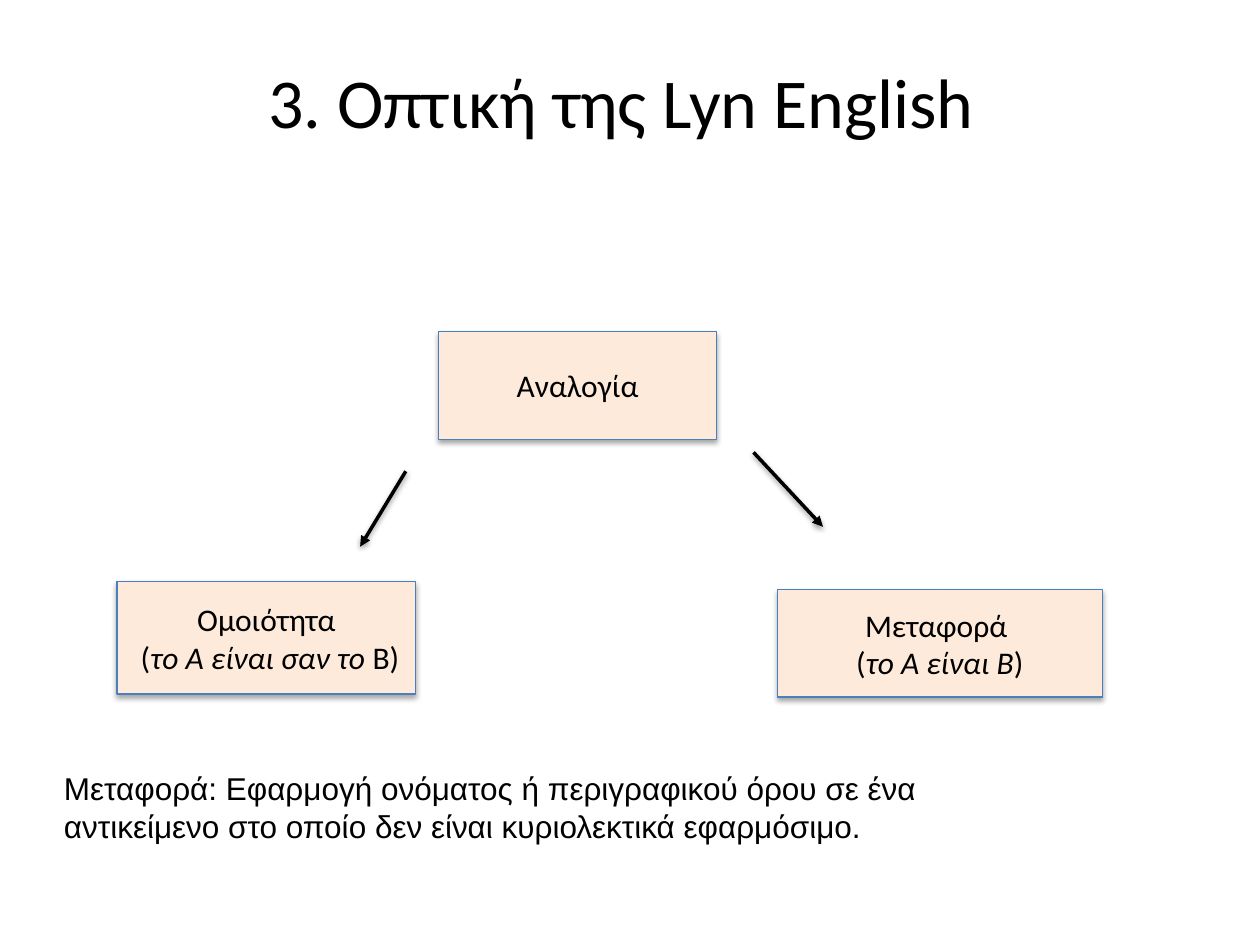
"""Build a slide on analogy, similarity and metaphor as a small tree of boxes."""
from lxml import etree
from pptx import Presentation
from pptx.dml.color import RGBColor
from pptx.enum.shapes import MSO_CONNECTOR, MSO_SHAPE
from pptx.enum.text import MSO_ANCHOR, MSO_AUTO_SIZE, PP_ALIGN
from pptx.oxml.ns import qn
from pptx.util import Cm, Pt

BLACK = RGBColor(0x00, 0x00, 0x00)
PEACH = RGBColor(0xFD, 0xEA, 0xDA)
BLUE = RGBColor(0x4B, 0x7E, 0xBC)
RECTANGLE = MSO_SHAPE.RECTANGLE
STRAIGHT = MSO_CONNECTOR.STRAIGHT
MIDDLE = MSO_ANCHOR.MIDDLE
CENTER = PP_ALIGN.CENTER
GROW = MSO_AUTO_SIZE.SHAPE_TO_FIT_TEXT


def format_run(r, size, font="Calibri", italic=False):
    r.font.size = Pt(size)
    r.font.name = font
    r.font.italic = italic
    r.font.color.rgb = BLACK


def add_shadow(spPr, distance, percent):
    effects = spPr.find(qn("a:effectLst"))
    if effects is None:
        effects = etree.SubElement(spPr, qn("a:effectLst"))
    shadow = etree.SubElement(effects, qn("a:outerShdw"), blurRad=str(Pt(3.15)),
                              dist=str(Pt(distance)), dir="5400000", rotWithShape="0")
    color = etree.SubElement(shadow, qn("a:srgbClr"), val=str(BLACK))
    etree.SubElement(color, qn("a:alpha"), val=str(percent * 1000))


prs = Presentation()
prs.slide_width, prs.slide_height = Cm(25.4), Cm(19.05)
slide = prs.slides.add_slide(prs.slide_layouts[5])

title = slide.shapes.title
title.left, title.top, title.width, title.height = Cm(0.33), Cm(0.43), Cm(24.69), Cm(3.18)
tf = title.text_frame
tf.text = "3. Οπτική της Lyn English "
tf.vertical_anchor = MIDDLE
tf.paragraphs[0].alignment = CENTER
format_run(tf.paragraphs[0].runs[0], 40)

boxes = [
    (8.84, 6.68, 5.61, 2.18, [[("Αναλογία", False)]]),
    (2.36, 11.73, 6.02, 2.26, [
        [("Ομοιότητα", False)],
        [(" (", False), ("το Α είναι σαν το ", True), ("Β)", False)]]),
    (15.67, 11.89, 6.55, 2.16, [
        [("Μεταφορά ", False)],
        [("(", False), ("το Α είναι Β", True), (")", False)]]),
]
for left, top, width, height, lines in boxes:
    s = slide.shapes.add_shape(RECTANGLE, Cm(left), Cm(top), Cm(width), Cm(height))
    s.fill.solid()
    s.fill.fore_color.rgb = PEACH
    s.line.color.rgb = BLUE
    s.line.width = Pt(0.75)
    s.shadow.inherit = False
    add_shadow(s._element.spPr, 1.8, 35)
    tf = s.text_frame
    tf.word_wrap = True
    tf.vertical_anchor = MIDDLE
    for i, line in enumerate(lines):
        p = tf.add_paragraph() if i else tf.paragraphs[0]
        p.alignment = CENTER
        for text, italic in line:
            r = p.add_run()
            r.text = text
            format_run(r, 18, italic=italic)

for x1, y1, x2, y2 in [(8.18, 9.5, 7.26, 11.02), (15.19, 9.12, 16.59, 10.62)]:
    arrow = slide.shapes.add_connector(STRAIGHT, Cm(x1), Cm(y1), Cm(x2), Cm(y2))
    arrow.line.color.rgb = BLACK
    arrow.line.width = Pt(2)
    etree.SubElement(arrow.line._get_or_add_ln(), qn("a:tailEnd"), type="triangle")
    add_shadow(arrow._element.spPr, 1.6, 38)

definition = slide.shapes.add_textbox(Cm(1.04), Cm(15.37), Cm(20.09), Cm(1.8))
tf = definition.text_frame
tf.word_wrap = True
tf.auto_size = GROW
tf.vertical_anchor = MIDDLE
tf.text = ("Μεταφορά: Εφαρμογή ονόματος ή περιγραφικού όρου σε ένα "
           "αντικείμενο στο οποίο δεν είναι κυριολεκτικά εφαρμόσιμο.")
format_run(tf.paragraphs[0].runs[0], 18, "Arial")

prs.save("out.pptx")
